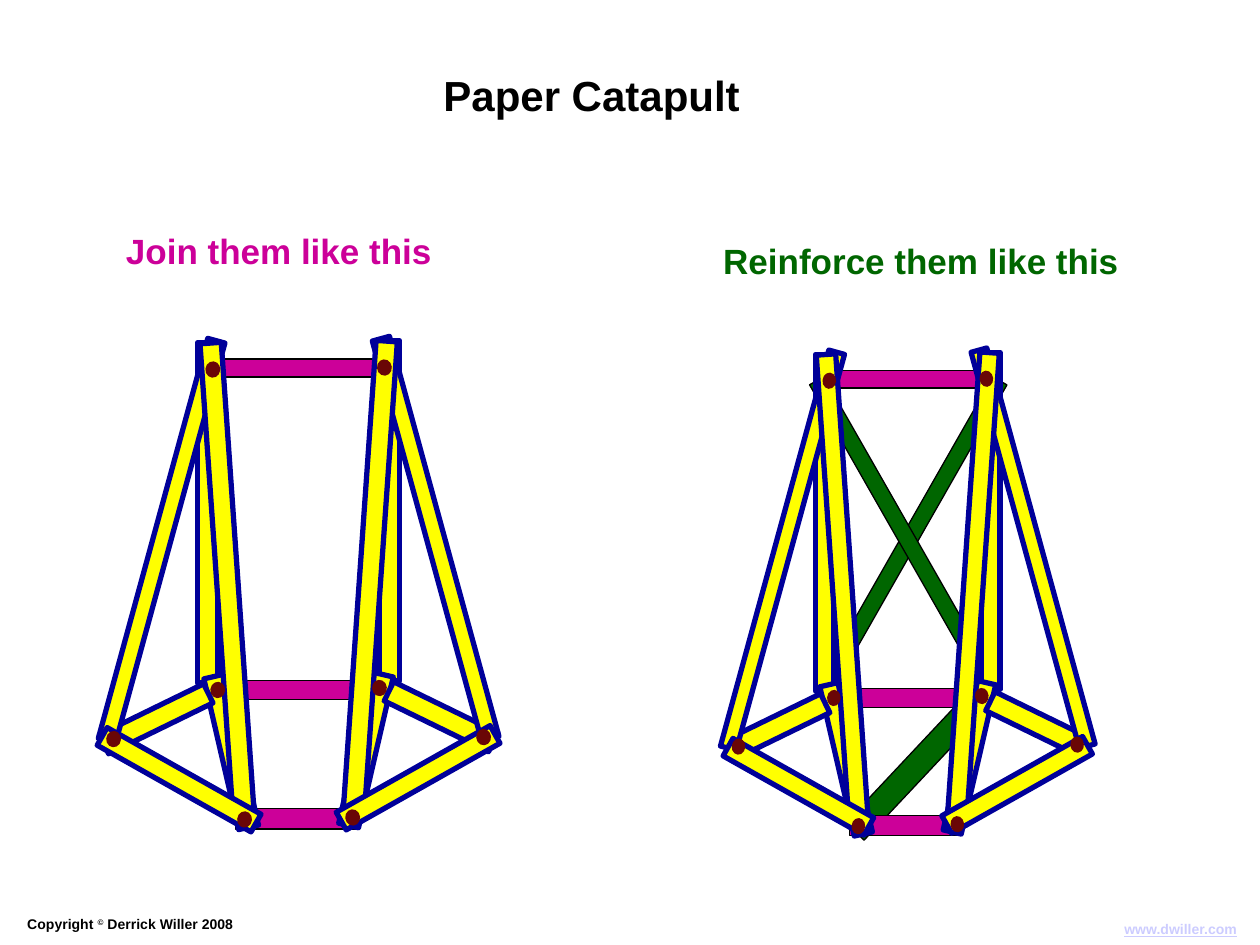
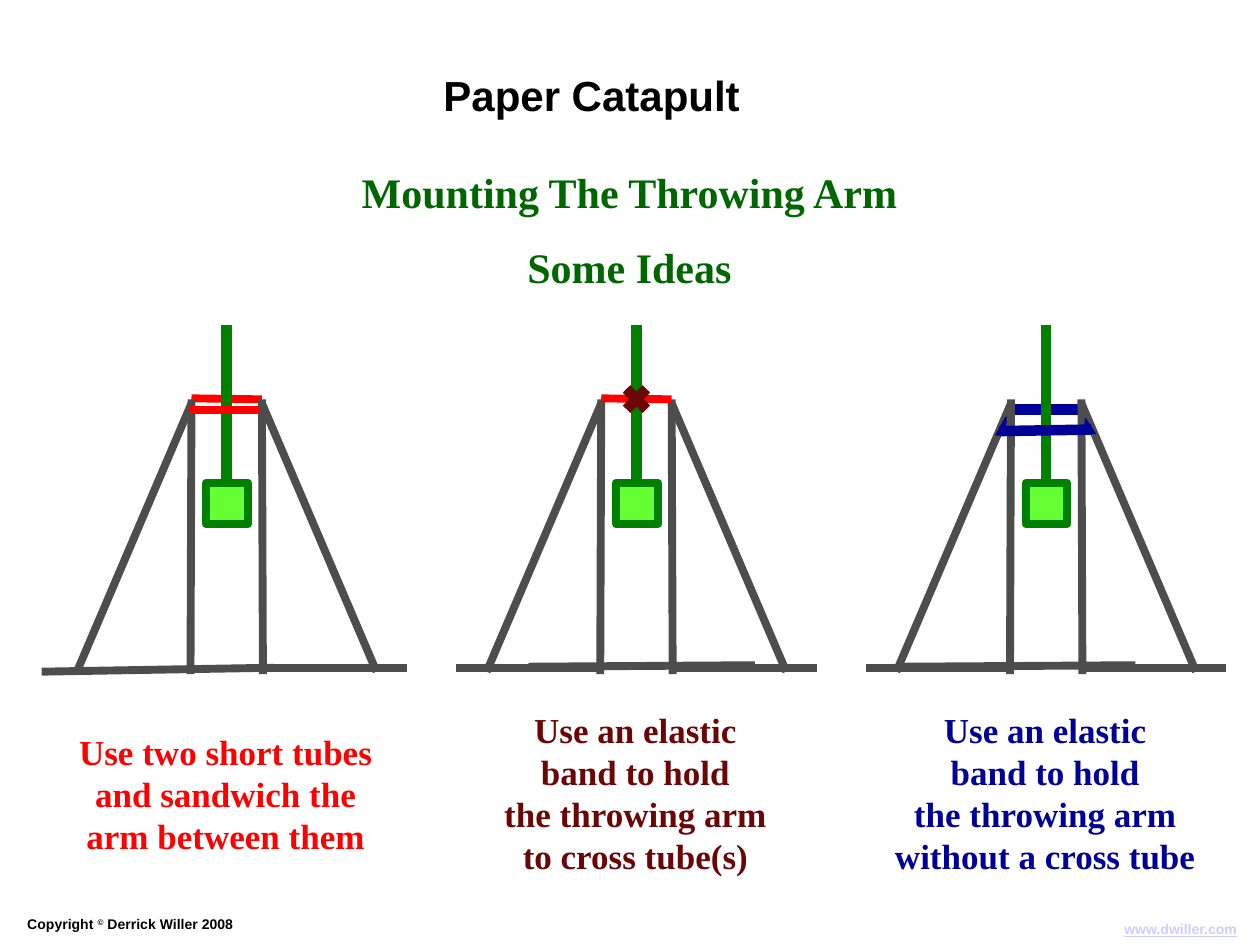
from dataclasses import dataclass

from lxml import etree
from pptx import Presentation
from pptx import util as u
from pptx.dml.color import RGBColor
from pptx.enum import shapes, text
from pptx.oxml import ns


@dataclass(frozen=True)
class Theme:
    sans: str = "Arial"
    serif: str = "Times New Roman"
    black: str = "000000"
    magenta: str = "CC0099"
    green: str = "006600"
    yellow: str = "FFFF00"
    navy: str = "000099"
    maroon: str = "6A0606"
    red: str = "FF0000"
    grey: str = "4D4D4D"
    arm_green: str = "008000"
    cup_green: str = "66FF33"
    pale_blue: str = "CCCCFF"
    title_size: int = 24
    label_size: int = 20
    footer_size: int = 8
    leading: float = 1.2
    thin: float = 0.75
    tube_edge: float = 3
    tube: float = 4.5
    heavy: float = 6


THEME = Theme()
RECT = shapes.MSO_SHAPE.RECTANGLE
CENTER = text.PP_ALIGN.CENTER
RIGHT = text.PP_ALIGN.RIGHT

RUNGS = [
    (-0.03, 7.42, 3.81, 0.36),
    (-0.03, 16.51, 2.49, 0.41),
    (0.08, 13.91, 3.15, 0.38),
]
SIDE_TUBES = [
    (-1.83, 10.34, 6.86, 0.41, 90),
    (-1.36, 15.16, 3.12, 0.41, 77),
    (-2.87, 14.49, 2.34, 0.43, -26),
    (-2.76, 10.9, 8.36, 0.36, -74.7),
    (-1.44, 11.72, 9.63, 0.43, 86),
    (-2.41, 15.72, 3.56, 0.41, 29.4),
]
SIDE_PINS = [(-3.73, 14.9), (-1.09, 16.52), (-1.73, 7.45), (-1.63, 13.91)]
PIN_WIDTH, PIN_HEIGHT, PIN_TILT = 0.3, 0.33, 5.5
MIRROR_RISE = 0.04

FIRST_AXIS, MOUNT_STEP = 4.57, 8.26
POST_X = 0.71


def color(value):
    return RGBColor.from_string(value)


def add_solid(parent, kind, center, size, fill, edge=None, weight=THEME.thin, turn=0):
    (x, y), (width, height) = center, size
    solid = parent.add_shape(kind, u.Cm(x - width / 2), u.Cm(y - height / 2),
                             u.Cm(width), u.Cm(height))
    solid.rotation = turn % 360
    solid.shadow.inherit = False
    solid.fill.solid()
    solid.fill.fore_color.rgb = color(fill)
    if edge:
        solid.line.color.rgb = color(edge)
        solid.line.width = u.Pt(weight)
    else:
        solid.line.fill.background()
    return solid


def add_line(parent, start, end, stroke, weight=THEME.tube):
    line = parent.add_connector(shapes.MSO_CONNECTOR.STRAIGHT,
                                *(u.Cm(value) for value in (*start, *end)))
    line.line.color.rgb = color(stroke)
    line.line.width = u.Pt(weight)
    etree.SubElement(line._element.spPr, ns.qn("a:effectLst"))


def add_words(slide, box, lines, font, size, ink, align=None, wrap=False, gap=0, middle=False):
    area = slide.shapes.add_textbox(*(u.Cm(value) for value in box))
    frame = area.text_frame
    frame.word_wrap = wrap
    frame.auto_size = text.MSO_AUTO_SIZE.SHAPE_TO_FIT_TEXT
    if middle:
        frame.vertical_anchor = text.MSO_ANCHOR.MIDDLE
    frame.text = "\n".join(lines)
    for index, paragraph in enumerate(frame.paragraphs):
        paragraph.alignment = align
        paragraph.line_spacing = u.Pt(size * THEME.leading)
        if index:
            paragraph.space_before = u.Pt(gap)
        for run in paragraph.runs:
            style_run(run, font, size, ink)
    return frame


def style_run(run, font, size, ink):
    run.font.name = font
    run.font.size = u.Pt(size)
    run.font.bold = True
    run.font.color.rgb = color(ink)


def add_page(deck):
    slide = deck.slides.add_slide(deck.slide_layouts[6])
    add_words(slide, (8.69, 1.27, 6.48, 1.27), ["Paper Catapult"],
              THEME.sans, THEME.title_size, THEME.black)
    notice = add_words(slide, (0.3, 18.34, 14.35, 0.61), ["Copyright "],
                       THEME.sans, THEME.footer_size, THEME.black, wrap=True)
    for words in ("©", " Derrick Willer 2008"):
        run = notice.paragraphs[0].add_run()
        run.text = words
        style_run(run, THEME.sans, THEME.footer_size, THEME.black)
    notice.paragraphs[0].runs[1].font._element.set("baseline", "30000")
    site = add_words(slide, (21.79, 18.44, 3.4, 0.61), ["www.dwiller.com"],
                     THEME.sans, THEME.footer_size, THEME.pale_blue, RIGHT, wrap=True)
    site.paragraphs[0].runs[0].font.underline = True
    return slide


def add_brace(parent, center, size, turn):
    add_solid(parent, RECT, center, size, THEME.green, THEME.black, turn=turn)


def add_tower(parent, axis, scale_x=1, scale_y=1, drop=0):
    def place(dx, y):
        return axis + dx * scale_x, y * scale_y + drop

    for dx, y, width, height in RUNGS:
        add_solid(parent, RECT, place(dx, y), (width * scale_x, height * scale_y),
                  THEME.magenta, THEME.black)
    for side, rise in ((1, 0), (-1, MIRROR_RISE)):
        for dx, y, length, thickness, turn in SIDE_TUBES:
            along, across = (scale_y, scale_x) if abs(turn) > 45 else (scale_x, scale_y)
            add_solid(parent, RECT, place(side * dx, y - rise),
                      (length * along, thickness * across),
                      THEME.yellow, THEME.navy, THEME.tube_edge, side * turn)
        for dx, y in SIDE_PINS:
            add_solid(parent, shapes.MSO_SHAPE.OVAL, place(side * dx, y - rise),
                      (PIN_WIDTH * scale_x, PIN_HEIGHT * scale_y),
                      THEME.maroon, turn=side * PIN_TILT)


def add_arm(slide, axis):
    arm = slide.shapes.add_group_shape().shapes
    add_line(arm, (axis, 9.96), (axis, 6.55), THEME.arm_green, THEME.heavy)
    add_solid(arm, RECT, (axis + 0.01, 10.15), (0.84, 0.84),
              THEME.cup_green, THEME.arm_green, THEME.tube)


def add_stand(slide, axis, floor, level_left=True):
    stand = slide.shapes.add_group_shape().shapes
    for side in (-1, 1):
        top = axis + side * POST_X
        add_line(stand, (top, 8.13), (axis + side * 3.02, 13.54), THEME.grey)
        add_line(stand, (top, 8.05), (axis + side * 0.73, 13.59), THEME.grey)
        if side > 0 or level_left:
            add_line(stand, (axis + side * 3.63, 13.46), (top, 13.46), THEME.grey)
    (left, left_y), (right, right_y) = floor
    add_line(stand, (axis + left, left_y), (axis + right, right_y), THEME.grey)


def add_top_tube(slide, axis):
    add_line(slide.shapes, (axis - POST_X, 8.03), (axis + POST_X, 8.05), THEME.red)


def add_caption(slide, axis, top, height, lines, ink):
    add_words(slide, (axis - 3.73, top, 7.42, height), lines, THEME.serif,
              THEME.label_size, ink, CENTER, wrap=True, middle=True)


def add_sandwich_mount(slide, axis):
    add_top_tube(slide, axis)
    add_arm(slide, axis)
    add_stand(slide, axis, ((-3.73, 13.54), (0.97, 13.46)), level_left=False)
    add_line(slide.shapes, (axis - 0.76, 8.26), (axis + 0.66, 8.26), THEME.red)
    add_caption(slide, axis, 14.61, 2.79,
                ["Use two short tubes and sandwich the", "arm between them"], THEME.red)


def add_cross_tube_mount(slide, axis):
    add_arm(slide, axis)
    add_stand(slide, axis, ((-2.18, 13.44), (2.39, 13.41)))
    add_top_tube(slide, axis)
    for side in (-1, 1):
        add_line(slide.shapes, (axis - side * 0.2, 7.84), (axis + side * 0.2, 8.25),
                 THEME.maroon, THEME.heavy)
    add_caption(slide, axis, 14.17, 3.63,
                ["Use an elastic", "band to hold", "the throwing arm", "to cross tube(s)"],
                THEME.maroon)


def add_band_mount(slide, axis):
    add_line(slide.shapes, (axis - 0.76, 8.26), (axis + POST_X, 8.26), THEME.navy, THEME.heavy)
    add_arm(slide, axis)
    add_stand(slide, axis, ((-2.87, 13.44), (1.8, 13.41)))
    add_line(slide.shapes, (axis + 0.91, 8.66), (axis - 0.94, 8.69), THEME.navy, THEME.heavy)
    for dx, height in ((0.89, 0.3), (-0.91, 0.36)):
        corner = add_solid(slide.shapes, shapes.MSO_SHAPE.RIGHT_TRIANGLE, (axis + dx, 8.59),
                           (0.2, height), THEME.navy, THEME.navy)
        if dx < 0:
            corner._element.spPr.get_or_add_xfrm().set("flipH", "1")
    add_caption(slide, axis, 14.17, 3.63,
                ["Use an elastic", "band to hold", "the throwing arm", "without a cross tube"],
                THEME.navy)


def build_joining(deck):
    slide = add_page(deck)
    add_brace(slide.shapes, (18.59, 15.32), (3.96, 0.51), -46.8)
    add_tower(slide.shapes.add_group_shape().shapes, 6.02)
    reinforced = slide.shapes.add_group_shape().shapes
    add_brace(reinforced, (18.36, 10.83), (7.26, 0.33), -60.3)
    add_brace(reinforced, (18.26, 10.83), (7.26, 0.33), 60.3)
    add_tower(reinforced, 18.3, scale_x=0.915, scale_y=0.99, drop=0.3)
    add_words(slide, (2.29, 4.5, 6.71, 1.12), ["Join them like this"],
              THEME.sans, THEME.label_size, THEME.magenta)
    add_words(slide, (14.33, 4.7, 8.53, 1.12), ["Reinforce them like this"],
              THEME.sans, THEME.label_size, THEME.green)


def build_mounting(deck):
    slide = add_page(deck)
    add_words(slide, (6.99, 3.23, 11.4, 2.79), ["Mounting The Throwing Arm", "Some Ideas"],
              THEME.serif, THEME.title_size, THEME.green, CENTER, gap=14.4, middle=True)
    mounts = (add_sandwich_mount, add_cross_tube_mount, add_band_mount)
    for index, add_mount in enumerate(mounts):
        add_mount(slide, FIRST_AXIS + index * MOUNT_STEP)


def main():
    deck = Presentation()
    deck.slide_width, deck.slide_height = u.Cm(25.4), u.Cm(19.05)
    build_joining(deck)
    build_mounting(deck)
    deck.save("out.pptx")


if __name__ == "__main__":
    main()
